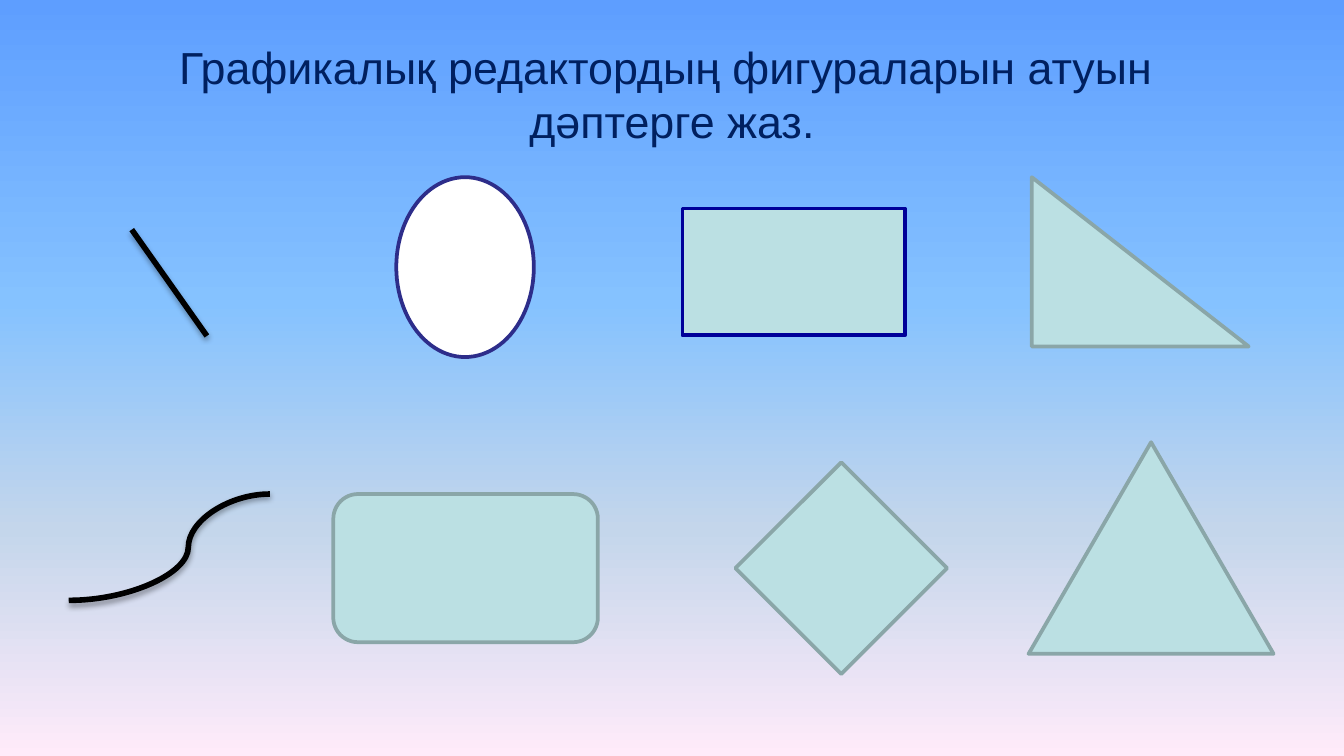
"""Build a slide that asks pupils to name the shapes of a graphics editor."""
from lxml import etree
from pptx import Presentation
from pptx import util as u
from pptx.dml import color
from pptx.enum import shapes, text
from pptx.oxml import ns

COLORS = {
    "title": "002060", "stroke": "000000", "white": "FFFFFF",
    "indigo": "2D2D8A", "navy": "000099", "mint": "BBE0E3", "sage": "8AA6A8",
}
SKY_STOPS = [(0, "5E9EFF"), (40, "85C2FF"), (70, "C4D6EB"), (100, "FFEBFA")]


def rgb(name):
    """Return the named colour."""
    return color.RGBColor.from_string(COLORS[name])


def add_node(parent, tag, **attributes):
    """Append a drawing element with its attributes and return it."""
    values = {key: str(value) for key, value in attributes.items()}
    return etree.SubElement(parent, ns.qn(tag), values)


def paint_background(page, stops):
    """Fill the page from top to bottom with gradient stops."""
    fill = page.background.fill
    fill.gradient()
    fill.gradient_angle = 270
    stop_list = page.element.find(".//" + ns.qn("a:gsLst"))
    for old_stop in list(stop_list):
        stop_list.remove(old_stop)
    for percent, value in stops:
        stop = add_node(stop_list, "a:gs", pos=percent * 1000)
        add_node(stop, "a:srgbClr", val=value)


def add_text(page, content, left, top, width, height, size, ink):
    """Add centred text in a wrapping box."""
    box = page.shapes.add_textbox(u.Cm(left), u.Cm(top), u.Cm(width), u.Cm(height))
    frame = box.text_frame
    frame.word_wrap = True
    frame.vertical_anchor = text.MSO_ANCHOR.MIDDLE
    para = frame.paragraphs[0]
    para.alignment = text.PP_ALIGN.CENTER
    para.text = content
    for span in para.runs:
        span.font.name = "Arial"
        span.font.size = u.Pt(size)
        span.font.color.rgb = rgb(ink)


def add_figure(page, kind, left, top, width, height, fill="mint", line="sage"):
    """Add an outlined preset shape."""
    figure = page.shapes.add_shape(
        kind, u.Cm(left), u.Cm(top), u.Cm(width), u.Cm(height))
    figure.shadow.inherit = False
    figure.fill.solid()
    figure.fill.fore_color.rgb = rgb(fill)
    figure.line.color.rgb = rgb(line)
    figure.line.width = u.Pt(2)


def add_stroke(page, kind, start, end, bend=None):
    """Add a thick shadowed connector, with an optional bend in percent."""
    points = [u.Cm(value) for value in (*start, *end)]
    stroke = page.shapes.add_connector(kind, *points)
    stroke.line.color.rgb = rgb("stroke")
    stroke.line.width = u.Pt(3)
    properties = stroke.element.spPr
    if bend is not None:
        guides = properties.find(".//" + ns.qn("a:avLst"))
        add_node(guides, "a:gd", name="adj1", fmla=f"val {int(bend * 1000)}")
    effects = add_node(properties, "a:effectLst")
    shadow = add_node(effects, "a:outerShdw", blurRad=u.Pt(3.1), dist=u.Pt(1.8),
                      dir=90 * 60000, rotWithShape=0)
    shade = add_node(shadow, "a:srgbClr", val=COLORS["stroke"])
    add_node(shade, "a:alpha", val=35000)


def main():
    """Lay out the title and the figures, then save the deck."""
    deck = Presentation()
    deck.slide_width, deck.slide_height = u.Cm(25.4), u.Cm(14.29)
    page = deck.slides.add_slide(deck.slide_layouts[6])
    paint_background(page, SKY_STOPS)
    add_text(page, "Графикалық редактордың фигураларын атуын \vдәптерге жаз.",
             1.27, 0.58, 22.86, 2.39, size=24, ink="title")

    kinds, links = shapes.MSO_SHAPE, shapes.MSO_CONNECTOR
    add_stroke(page, links.STRAIGHT, (2.49, 4.34), (3.91, 6.35))
    add_figure(page, kinds.OVAL, 7.49, 3.35, 2.6, 3.4, fill="white", line="indigo")
    add_figure(page, kinds.RECTANGLE, 12.9, 3.94, 4.2, 2.4, line="navy")
    add_figure(page, kinds.ROUNDED_RECTANGLE, 6.3, 9.34, 5, 2.8)
    add_figure(page, kinds.DIAMOND, 13.9, 8.74, 4, 4)
    add_figure(page, kinds.RIGHT_TRIANGLE, 19.5, 3.35, 4.1, 3.2)
    add_stroke(page, links.CURVE, (1.3, 11.35), (5.1, 9.34), bend=59.5)
    add_figure(page, kinds.ISOSCELES_TRIANGLE, 19.44, 8.36, 4.63, 4)
    deck.save("out.pptx")


if __name__ == "__main__":
    main()
